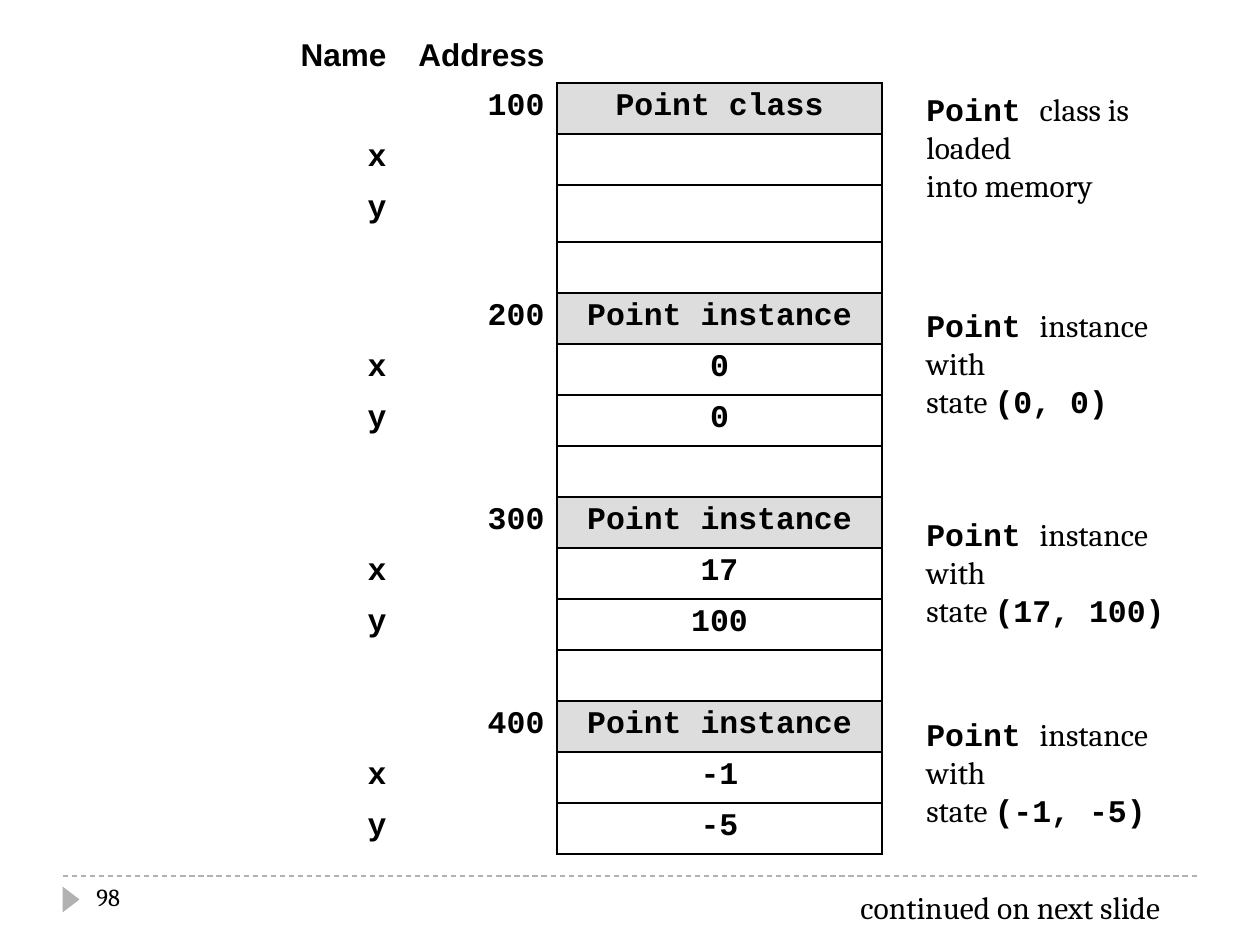
from dataclasses import dataclass

from lxml.etree import SubElement
from pptx import Presentation
from pptx.dml.color import RGBColor
from pptx.enum.dml import MSO_LINE_DASH_STYLE as DASH
from pptx.enum.shapes import MSO_CONNECTOR, MSO_SHAPE
from pptx.enum.text import PP_ALIGN
from pptx.oxml.ns import qn
from pptx.util import Emu, Pt

PX = 914400 / 126
COLORS = {"text": "000000", "paper": "FFFFFF", "header": "DDDDDD", "accent": "B2B2B2"}
HEADING, BODY, CODE = "Arial", "Cambria", "Courier New"
COLUMN_WIDTHS = (126, 158, 325)
ROW_HEIGHT, TALL_ROW_HEIGHT, TALL_ROW = 51, 57, 3
TABLE_LEFT, TABLE_TOP = 273, 32
NOTE_LEFT, NOTE_HEIGHT = 914, 89


@dataclass
class Span:
    text: str
    font: str = BODY
    bold: bool = False
    size: int = 18


@dataclass
class Block:
    address: str
    title: str
    x: str
    y: str
    note_top: int
    note_width: int
    note: list[list[Span]]


def px(length: float) -> Emu:
    return Emu(round(length * PX))


def color(name: str) -> RGBColor:
    return RGBColor.from_string(COLORS[name])


def code(text: str) -> Span:
    return Span(text, CODE, True)


def instance(address: str, x: str, y: str, note_top: int) -> Block:
    note = [[code("Point "), Span("instance with")],
            [Span("state "), code(f"({x}, {y})")]]
    return Block(address, "Point instance", x, y, note_top, 305, note)


BLOCKS = [
    Block("100", "Point class", "", "", 84, 315,
          [[code("Point "), Span("class is loaded")], [Span("into memory")]]),
    instance("200", "0", "0", 300),
    instance("300", "17", "100", 509),
    instance("400", "-1", "-5", 709),
]


def write_span(paragraph, span: Span) -> None:
    run = paragraph.add_run()
    run.text = span.text
    run.font.name = span.font
    run.font.size = Pt(span.size)
    run.font.bold = span.bold
    run.font.color.rgb = color("text")


def add_text(slide, left: int, top: int, width: int, height: int,
             lines: list[list[Span]], wrap: bool = False) -> None:
    text_frame = slide.shapes.add_textbox(px(left), px(top), px(width), px(height)).text_frame
    text_frame.word_wrap = wrap
    for index, line in enumerate(lines):
        paragraph = text_frame.add_paragraph() if index else text_frame.paragraphs[0]
        for span in line:
            write_span(paragraph, span)


def add_border(cell, side: str, name: str, points: int) -> None:
    properties = cell._tc.get_or_add_tcPr()
    line = SubElement(properties, qn(f"a:ln{side}"), w=str(Pt(points)))
    fill = SubElement(line, qn("a:solidFill"))
    SubElement(fill, qn("a:srgbClr"), val=COLORS[name])


def style_cell(cell, row: int, column: int, text: str) -> None:
    in_memory = column == 2 and row > 0
    borders = {side: ("text" if in_memory else "paper", 1) for side in "LRTB"}
    if row == 0:
        borders["B"] = ("text", 1) if column == 2 else ("paper", 3)
    elif column == 1:
        borders["R"] = ("text", 1)
    for side, (name, points) in borders.items():
        add_border(cell, side, name, points)
    cell.fill.solid()
    cell.fill.fore_color.rgb = color("header" if in_memory and row % 4 == 1 else "paper")
    paragraph = cell.text_frame.paragraphs[0]
    paragraph.alignment = PP_ALIGN.CENTER if column == 2 else PP_ALIGN.RIGHT
    if text:
        write_span(paragraph, Span(text, CODE if row else HEADING, True))
    else:
        SubElement(paragraph._p, qn("a:endParaRPr"), sz="1400")


def memory_rows() -> list[tuple[str, str, str]]:
    rows = [("Name", "Address", "")]
    for block in BLOCKS:
        rows += [("", block.address, block.title), ("x", "", block.x),
                 ("y", "", block.y), ("", "", "")]
    return rows[:-1]


def add_memory_table(slide) -> None:
    rows = memory_rows()
    heights = [TALL_ROW_HEIGHT if row == TALL_ROW else ROW_HEIGHT for row in range(len(rows))]
    table = slide.shapes.add_table(len(rows), len(COLUMN_WIDTHS), px(TABLE_LEFT), px(TABLE_TOP),
                                   px(sum(COLUMN_WIDTHS)), px(sum(heights))).table
    table.first_row = table.horz_banding = False
    for column, width in zip(table.columns, COLUMN_WIDTHS):
        column.width = px(width)
    for row, texts in enumerate(rows):
        table.rows[row].height = px(heights[row])
        for column, text in enumerate(texts):
            style_cell(table.cell(row, column), row, column, text)


def add_footer(slide) -> None:
    rule = slide.shapes.add_connector(MSO_CONNECTOR.STRAIGHT, px(63), px(876), px(1197), px(876))
    rule.line.color.rgb = color("accent")
    rule.line.width = Pt(0.75)
    rule.line.dash_style = DASH.DASH
    SubElement(rule._element.spPr, qn("a:effectLst"))
    marker = slide.shapes.add_shape(MSO_SHAPE.ISOSCELES_TRIANGLE, px(58), px(891), px(26), px(17))
    marker.rotation = 90
    marker.shadow.inherit = False
    marker.fill.solid()
    marker.fill.fore_color.rgb = color("accent")
    marker.line.fill.background()
    add_text(slide, 84, 876, 273, 50, [[Span("98", size=14)]], wrap=True)


def main() -> None:
    presentation = Presentation()
    presentation.slide_width, presentation.slide_height = px(1260), px(945)
    slide = presentation.slides.add_slide(presentation.slide_layouts[6])
    add_footer(slide)
    add_memory_table(slide)
    for block in BLOCKS:
        add_text(slide, NOTE_LEFT, block.note_top, block.note_width, NOTE_HEIGHT, block.note)
    add_text(slide, 848, 882, 347, 50, [[Span("continued on next slide")]])
    presentation.save("out.pptx")


if __name__ == "__main__":
    main()
